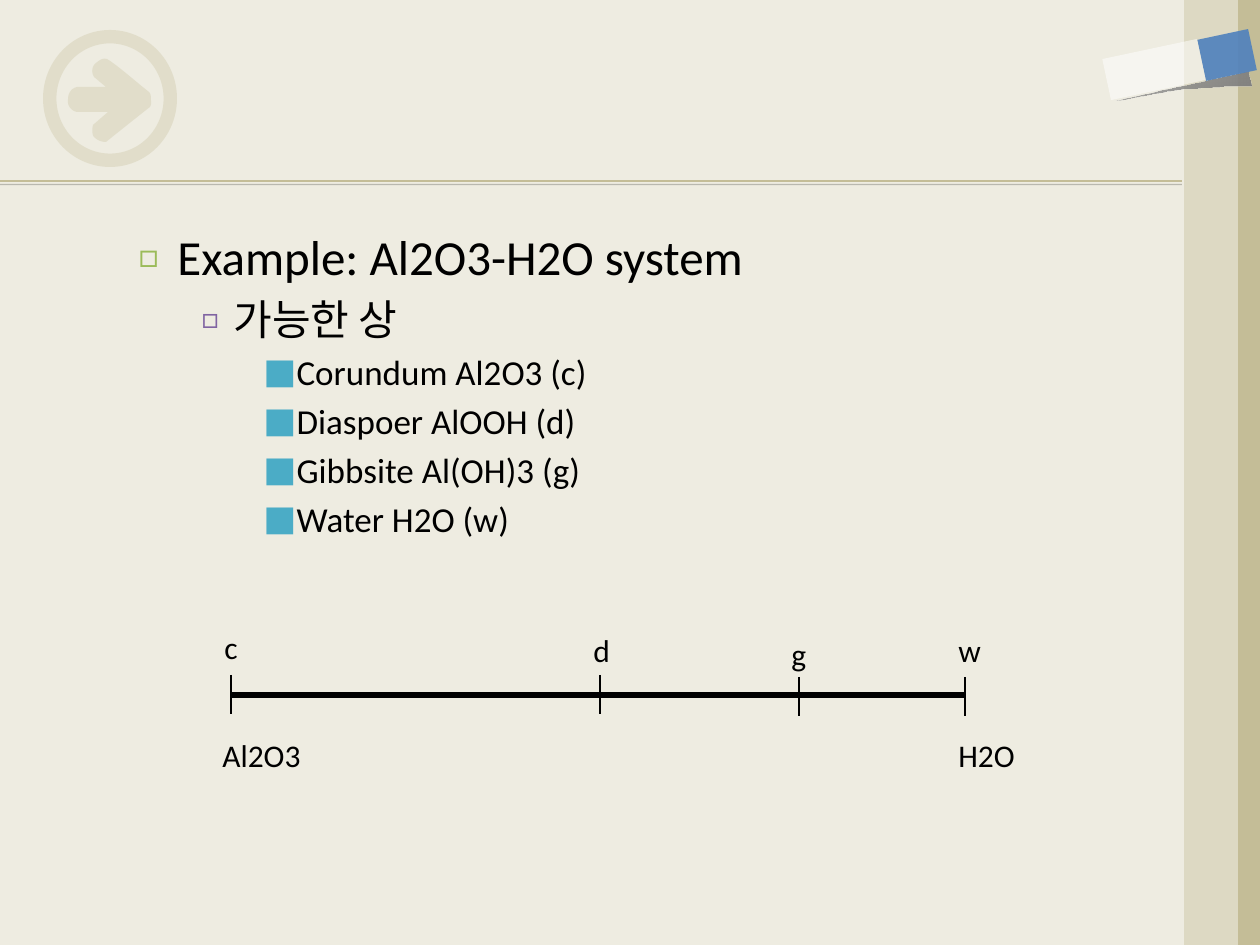
from lxml import etree
from pptx import Presentation, util as u
from pptx.dml.color import RGBColor
from pptx.enum import shapes, text
from pptx.oxml import parse_xml
from pptx.oxml.ns import nsdecls, qn

# Content: level, text
OUTLINE = [
    (0, "Example: Al2O3-H2O system"),
    (1, "가능한 상"),
    (2, "Corundum Al2O3 (c)"),
    (2, "Diaspoer AlOOH (d)"),
    (2, "Gibbsite Al(OH)3 (g)"),
    (2, "Water H2O (w)"),
]
# Per level: size, left margin px, hanging px, bullet, bullet colour, bullet %
LEVELS = [
    (28, 102, 39, "□", "9BBB59", 70),
    (24, 158, 32, "□", "8064A2", 70),
    (20, 220, 32, "■", "4BACC6", 100),
]
AXIS_Y, TICK = 695, 39
TICKS = [(231, 675), (600, 675), (799, 677), (965, 677)]  # x, top
# Text, left, top, width
LABELS = [
    ("c", 212, 622, 39), ("d", 581, 625, 43), ("g", 779, 629, 43),
    ("w", 946, 625, 48), ("Al2O3", 210, 730, 107), ("H2O", 946, 730, 86),
]
# Outlines: a pair is a line end, three pairs are a curve
ARROW = [
    (149, 92), ((141, 86), (116, 64), (107, 59)), ((102, 58), (100, 60), (96, 63)),
    ((92, 66), (91, 72), (94, 77)), (106, 87), (77, 87),
    ((69, 89), (68, 96), (68, 100)), ((67, 105), (71, 111), (77, 112)),
    (108, 112), (93, 125), ((92, 129), (92, 135), (94, 137)),
    ((97, 140), (101, 142), (106, 142)), ((127, 125), (150, 107), (150, 107)),
    ((152, 103), (151, 102), (151, 100)), ((151, 97), (151, 94), (149, 92)),
]
TAPE_SHADOW = [
    (1247, 72), (1251, 87), ((1169, 86), (1153, 96), (1115, 101)),
    ((1159, 91), (1203, 82), (1247, 72)),
]


def px(n):
    return round(n * 914400 / 126)


def color(code):
    return RGBColor.from_string(code)


def paint(shape, code, opacity=100):
    shape.shadow.inherit = False
    shape.line.fill.background()
    shape.fill.solid()
    shape.fill.fore_color.rgb = color(code)
    if opacity < 100:
        tone = shape._element.spPr.find(qn("a:solidFill"))[0]
        etree.SubElement(tone, qn("a:alpha"), val=str(opacity * 1000))


def add_preset(kind, box, code, opacity=100, turn=0):
    shape = page.shapes.add_shape(kind, *map(px, box))
    shape.rotation = turn
    paint(shape, code, opacity)
    return shape


def add_outline(steps, code, opacity=100):
    points = [steps[0]]
    for step in steps[1:]:
        if len(step) == 2:
            points.append(step)
            continue
        a, (b, c, d) = points[-1], step
        for i in range(1, 9):
            t = i / 8
            s = 1 - t
            points.append(tuple(
                s**3 * a[k] + 3 * s * s * t * b[k] + 3 * s * t * t * c[k] + t**3 * d[k]
                for k in (0, 1)))
    points = [(px(x), px(y)) for x, y in points]
    builder = page.shapes.build_freeform(*points[0])
    builder.add_line_segments(points[1:], close=True)
    shape = builder.convert_to_shape()
    paint(shape, code, opacity)
    return shape


def add_line(x1, y1, x2, y2, code="000000", width=0.75):
    line = page.shapes.add_connector(
        shapes.MSO_CONNECTOR.STRAIGHT, px(x1), px(y1), px(x2), px(y2))
    line.line.color.rgb = color(code)
    line.line.width = u.Pt(width)
    return etree.SubElement(line._element.spPr, qn("a:effectLst"))


def add_text(left, top, width, height, wrap):
    frame = page.shapes.add_textbox(*map(px, (left, top, width, height))).text_frame
    frame.word_wrap = wrap
    frame.auto_size = text.MSO_AUTO_SIZE.NONE if wrap else text.MSO_AUTO_SIZE.SHAPE_TO_FIT_TEXT
    return frame


def write(para, words, size):
    para.text = words
    para.font.size = u.Pt(size)
    para.font.name = "Calibri"
    para.font.color.rgb = color("000000")


deck = Presentation()
deck.slide_width, deck.slide_height = px(1260), px(945)
page = deck.slides.add_slide(deck.slide_layouts[6])
page.background.fill.solid()
page.background.fill.fore_color.rgb = color("EEECE1")

# Header rule with its shadow
effects = add_line(0, 181, 1182, 181, "C4BD97")
effects.append(parse_xml(
    f'<a:outerShdw {nsdecls("a")} blurRad="0" dist="25400" dir="5400000">'
    '<a:srgbClr val="000000"><a:alpha val="22000"/></a:srgbClr></a:outerShdw>'))

# Arrow in a ring
add_outline(ARROW, "C4BD97", 30)
ring = add_preset(shapes.MSO_SHAPE.DONUT, (43, 30, 134, 137), "C4BD97", 30)
ring.adjustments[0] = 0.1

# Side bands
RECT = shapes.MSO_SHAPE.RECTANGLE
add_preset(RECT, (1186, 0, 74, 945), "C4BD97")
add_preset(RECT, (1184, 0, 54, 945), "DDD9C3")

# Tape strip and its fading shadow
fade = add_outline(TAPE_SHADOW, "808080")
solid = fade._element.spPr.find(qn("a:solidFill"))
solid.getparent().replace(solid, parse_xml(
    f'<a:gradFill {nsdecls("a")}><a:gsLst><a:gs pos="0"><a:srgbClr val="808080"/></a:gs>'
    '<a:gs pos="100000"><a:srgbClr val="808080"><a:alpha val="56000"/></a:srgbClr></a:gs>'
    '</a:gsLst><a:path path="circle"><a:fillToRect l="100000" t="100000"/></a:path></a:gradFill>'))
add_preset(RECT, (1206, 29, 42, 52), "4F81BD", 90, 78)
add_preset(RECT, (1133, 21, 42, 97), "FFFFFF", 50, 78)

# Outline text
body = add_text(63, 220, 1118, 624, True)
for i, (level, words) in enumerate(OUTLINE):
    size, margin, hang, bullet, tint, percent = LEVELS[level]
    para = body.add_paragraph() if i else body.paragraphs[0]
    write(para, words, size)
    para.level = level
    props = para._p.get_or_add_pPr()
    props.set("marL", str(px(margin)))
    props.set("indent", str(-px(hang)))
    marks = parse_xml(
        f'<a:pPr {nsdecls("a")}><a:spcBef><a:spcPct val="20000"/></a:spcBef>'
        f'<a:buClr><a:srgbClr val="{tint}"/></a:buClr><a:buSzPct val="{percent * 1000}"/>'
        f'<a:buFont typeface="Calibri"/><a:buChar char="{bullet}"/></a:pPr>')
    for spot, mark in enumerate(list(marks)):
        props.insert(spot, mark)

# Composition axis
add_line(TICKS[0][0], AXIS_Y, TICKS[-1][0], AXIS_Y, width=3)
for x, top in TICKS:
    add_line(x, top, x, top + TICK)
for words, left, top, width in LABELS:
    write(add_text(left, top, width, 50, False).paragraphs[0], words, 18)

deck.save("out.pptx")
